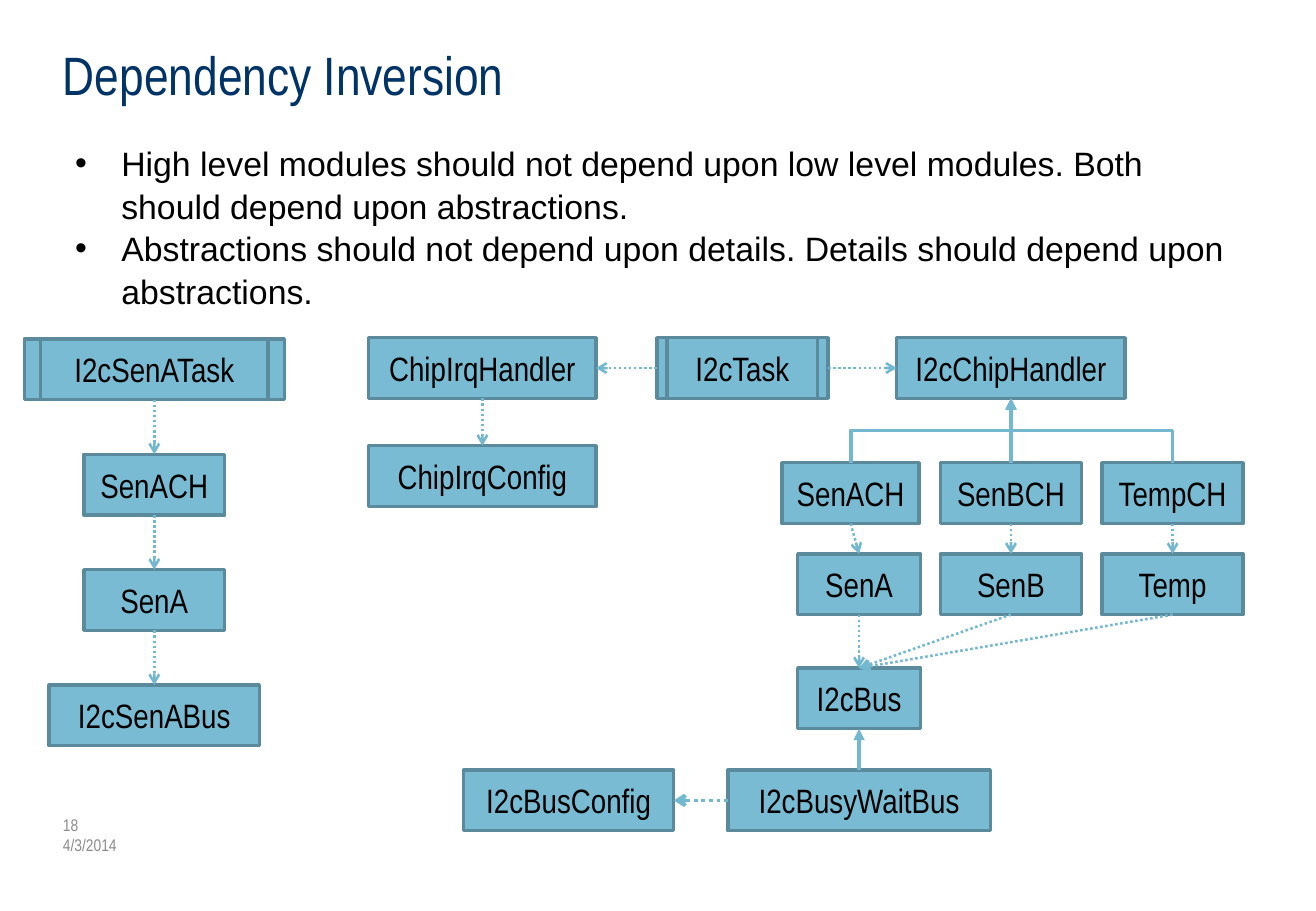
"""Builds the Dependency Inversion slide with its two module diagrams."""
import pptx
import pptx.dml.color
import pptx.enum.dml
import pptx.enum.shapes
import pptx.enum.text
import pptx.util
from pptx.oxml.ns import qn
from lxml import etree

RGBColor = pptx.dml.color.RGBColor
MSO_CONNECTOR = pptx.enum.shapes.MSO_CONNECTOR
Pt = pptx.util.Pt

NAVY = RGBColor(0x00, 0x33, 0x66)
BLACK = RGBColor(0x00, 0x00, 0x00)
GREY = RGBColor(0x8C, 0x8C, 0x8C)
MODULE_FILL = RGBColor(0x79, 0xBB, 0xD2)
MODULE_EDGE = RGBColor(0x5A, 0x8A, 0x9B)
ARROW_BLUE = RGBColor(0x74, 0xB8, 0xD0)

TITLE = "Dependency Inversion"
PRINCIPLES = [
    "High level modules should not depend upon low level modules. "
    "Both should depend upon abstractions.",
    "Abstractions should not depend upon details. "
    "Details should depend upon abstractions.",
]
FOOTER = ["18", "4/3/2014"]

EMU_PER_PX = 9144
MODULE_HEIGHT = 50
TOP, LEFT, BOTTOM, RIGHT = range(4)

CHAIN_CENTRE, CHAIN_TOP, CHAIN_STEP = 127, 279, 95
CHAIN = [("I2cSenATask", 187, 214), ("SenACH", 116, 0),
         ("SenA", 116, 0), ("I2cSenABus", 173, 0)]

# name: centre, top, width, width of the task frame
MODULES = {
    "ChipIrqHandler": (397, 278, 187, 0),
    "I2cTask": (611, 278, 124, 141),
    "I2cChipHandler": (832, 278, 188, 0),
    "ChipIrqConfig": (397, 367, 187, 0),
    "SenACH": (700, 381, 113, 0),
    "SenBCH": (832, 381, 116, 0),
    "TempCH": (965, 381, 116, 0),
    "SenA": (707, 456, 101, 0),
    "SenB": (832, 456, 116, 0),
    "Temp": (965, 456, 116, 0),
    "I2cBus": (707, 550, 101, 0),
    "I2cBusConfig": (468, 634, 173, 0),
    "I2cBusyWaitBus": (707, 634, 216, 0),
}
USES = [
    ("I2cTask", LEFT, "ChipIrqHandler", RIGHT, 1.5),
    ("I2cTask", RIGHT, "I2cChipHandler", LEFT, 1.5),
    ("ChipIrqHandler", BOTTOM, "ChipIrqConfig", TOP, 1.5),
    ("SenACH", BOTTOM, "SenA", TOP, 1.5),
    ("SenBCH", BOTTOM, "SenB", TOP, 1.5),
    ("TempCH", BOTTOM, "Temp", TOP, 1.5),
    ("SenA", BOTTOM, "I2cBus", TOP, 1.5),
    ("SenB", BOTTOM, "I2cBus", TOP, 1.5),
    ("Temp", BOTTOM, "I2cBus", TOP, 1.5),
    ("I2cBusyWaitBus", LEFT, "I2cBusConfig", RIGHT, 2.25),
]
INHERITS = [("SenACH", "I2cChipHandler"), ("SenBCH", "I2cChipHandler"),
            ("TempCH", "I2cChipHandler"), ("I2cBusyWaitBus", "I2cBus")]


def px(length):
    return round(length * EMU_PER_PX)


def format_runs(frame, size, font, colour):
    for paragraph in frame.paragraphs:
        for run in paragraph.runs:
            run.font.size = Pt(size)
            run.font.name = font
            run.font.color.rgb = colour


def add_text(slide, box, lines, size, font, colour, anchor):
    frame = slide.shapes.add_textbox(*map(px, box)).text_frame
    frame.word_wrap = True
    frame.vertical_anchor = anchor
    frame.text = "\n".join(lines)
    format_runs(frame, size, font, colour)
    return frame


def add_bullet(paragraph):
    properties = paragraph._p.get_or_add_pPr()
    properties.set("marL", str(px(38)))
    properties.set("indent", str(px(-38)))
    etree.SubElement(properties, qn("a:buFont")).set("typeface", "Arial")
    etree.SubElement(properties, qn("a:buChar")).set("char", "•")
    paragraph.line_spacing = 1.05


def add_box(slide, centre, top, width):
    box = slide.shapes.add_shape(
        pptx.enum.shapes.MSO_SHAPE.RECTANGLE,
        px(centre - width / 2), px(top), px(width), px(MODULE_HEIGHT))
    box.shadow.inherit = False
    box.fill.solid()
    box.fill.fore_color.rgb = MODULE_FILL
    box.line.color.rgb = MODULE_EDGE
    box.line.width = Pt(2)
    return box


def add_module(slide, name, centre, top, width, frame_width):
    task_frame = add_box(slide, centre, top, frame_width) if frame_width else None
    module = add_box(slide, centre, top, width)
    label = module.text_frame
    label.word_wrap = False
    label.vertical_anchor = pptx.enum.text.MSO_ANCHOR.MIDDLE
    label.text = name
    label.paragraphs[0].alignment = pptx.enum.text.PP_ALIGN.CENTER
    format_runs(label, 20, "Arial Narrow", BLACK)
    return task_frame or module


def style_arrow(arrow, width, head, dotted):
    arrow.line.color.rgb = ARROW_BLUE
    arrow.line.width = Pt(width)
    if dotted:
        arrow.line.dash_style = pptx.enum.dml.MSO_LINE.ROUND_DOT
    outline = arrow.line._get_or_add_ln()
    etree.SubElement(outline, qn("a:tailEnd")).set("type", head)
    etree.SubElement(arrow._element.spPr, qn("a:effectLst"))


def add_straight(slide, source, source_side, target, target_side, width, head, dotted):
    arrow = slide.shapes.add_connector(MSO_CONNECTOR.STRAIGHT, 0, 0, 0, 0)
    arrow.begin_connect(source, source_side)
    arrow.end_connect(target, target_side)
    style_arrow(arrow, width, head, dotted)


def add_inheritance(slide, child, parent):
    start_x, end_x = (box.left + box.width // 2 for box in (child, parent))
    if abs(start_x - end_x) < px(1):
        add_straight(slide, child, TOP, parent, BOTTOM, 2.25, "triangle", False)
        return
    start_y, end_y = child.top, parent.top + parent.height
    middle_x, middle_y = (start_x + end_x) // 2, (start_y + end_y) // 2
    across, down = start_x - middle_x, start_y - middle_y
    arrow = slide.shapes.add_connector(
        MSO_CONNECTOR.ELBOW, middle_x + down, middle_y - across,
        middle_x - down, middle_y + across)
    arrow._element.spPr.find(qn("a:xfrm")).set("rot", str(90 * 60000))
    style_arrow(arrow, 2.25, "triangle", False)


def main():
    deck = pptx.Presentation()
    deck.slide_width, deck.slide_height = px(1083), px(750)
    slide = deck.slides.add_slide(deck.slide_layouts[6])
    anchors = pptx.enum.text.MSO_ANCHOR

    add_text(slide, (42, 29, 1000, 76), [TITLE], 32, "Arial Narrow", NAVY, anchors.TOP)
    add_text(slide, (42, 662, 217, 50), FOOTER, 10, "Arial Narrow", GREY, anchors.MIDDLE)
    principles = add_text(slide, (52, 111, 971, 145), PRINCIPLES, 20, "Arial", BLACK,
                          anchors.TOP)
    for paragraph in principles.paragraphs:
        add_bullet(paragraph)

    chain = [add_module(slide, name, CHAIN_CENTRE, CHAIN_TOP + row * CHAIN_STEP,
                        width, frame_width)
             for row, (name, width, frame_width) in enumerate(CHAIN)]
    for upper, lower in zip(chain, chain[1:]):
        add_straight(slide, upper, BOTTOM, lower, TOP, 1.5, "arrow", True)

    modules = {name: add_module(slide, name, *place) for name, place in MODULES.items()}
    for user, user_side, used, used_side, width in USES:
        add_straight(slide, modules[user], user_side, modules[used], used_side,
                     width, "arrow", True)
    for child, parent in INHERITS:
        add_inheritance(slide, modules[child], modules[parent])

    deck.save("out.pptx")


if __name__ == "__main__":
    main()
